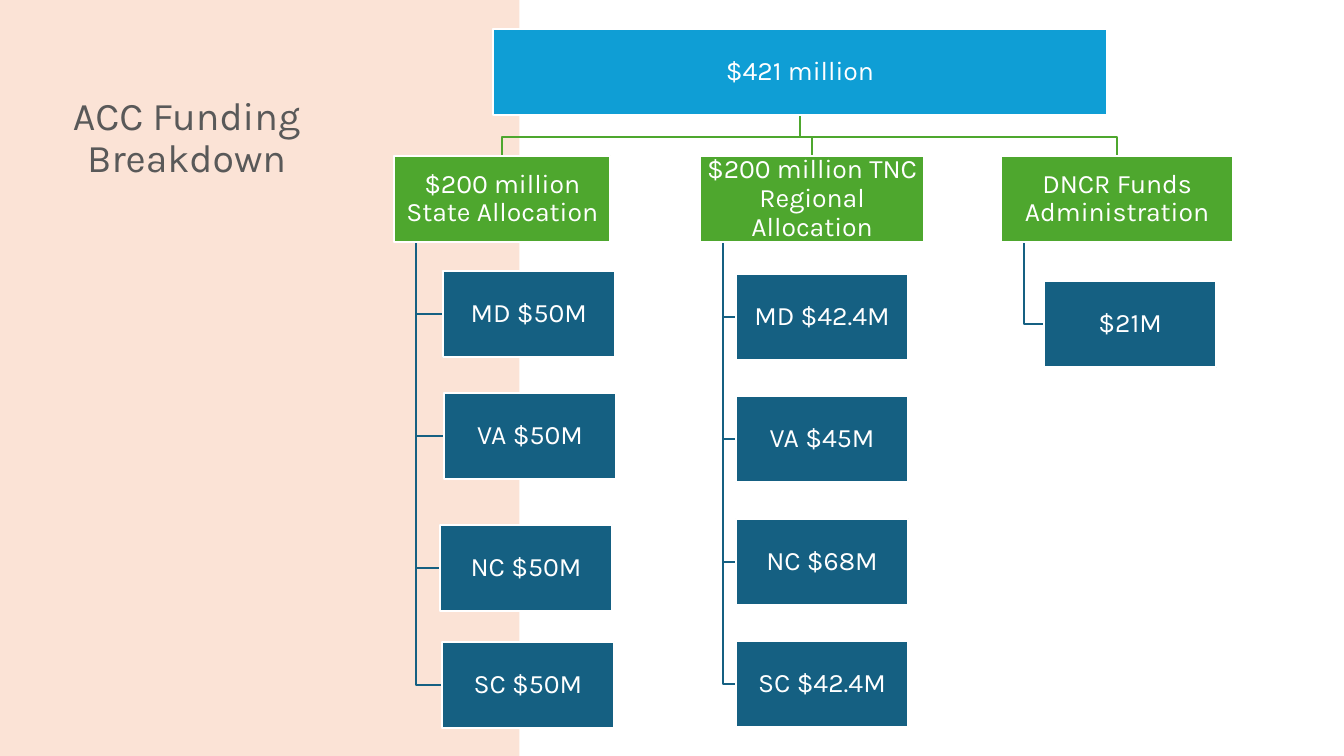
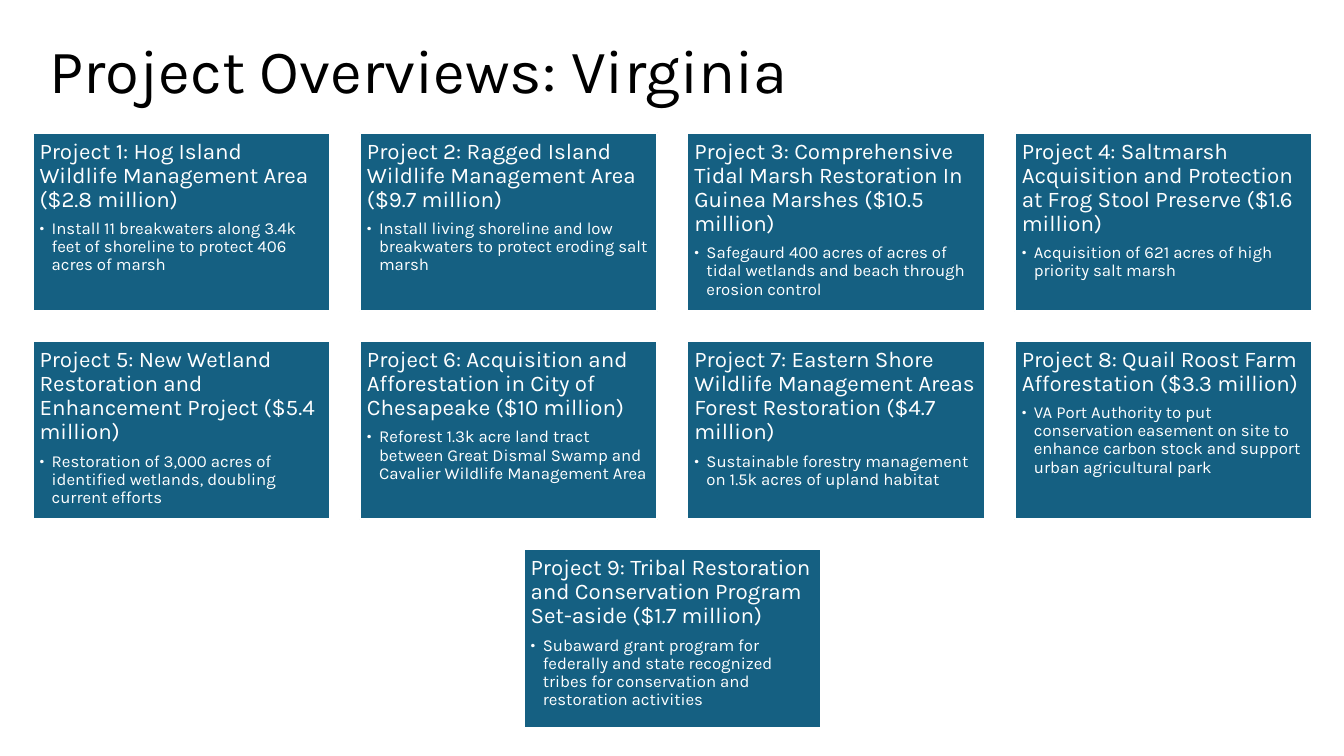
from collections import namedtuple

from lxml import etree
from pptx import Presentation
from pptx.dml.color import RGBColor
from pptx.enum.shapes import MSO_SHAPE
from pptx.enum.text import MSO_ANCHOR, PP_ALIGN
from pptx.oxml.ns import qn
from pptx.util import Inches, Pt

RECTANGLE = MSO_SHAPE.RECTANGLE
TOP, MIDDLE, BOTTOM = MSO_ANCHOR.TOP, MSO_ANCHOR.MIDDLE, MSO_ANCHOR.BOTTOM
LEFT, CENTER = PP_ALIGN.LEFT, PP_ALIGN.CENTER

SLIDE_WIDTH, SLIDE_HEIGHT = Inches(13.33), Inches(7.5)
COLUMN, ROW = SLIDE_WIDTH / 100, SLIDE_HEIGHT / 100
FONT = "Karla"
WHITE, BLACK, GRAY = "FFFFFF", "000000", "595959"
PEACH, SKY, GREEN, TEAL = "FBE3D6", "0F9ED5", "4EA72E", "156082"
LINE_WIDTH = Pt(1.5)

Box = namedtuple("Box", "left top width height")
Branch = namedtuple("Branch", "text left width leaves")
Leaf = namedtuple("Leaf", "text indent top")

NODE_HEIGHT, LEAF_WIDTH = 11.4, 12.83
BRANCH_TOP, CROSSBAR_TOP = 20.6, 18.13
RAIL_SHARE = 0.1
REGIONAL_TOP, REGIONAL_STEP = 36.2, 16.2
REGIONAL_SHARES = ["MD $42.4M", "VA $45M", "NC $68M", "SC $42.4M"]

BRANCHES = [
    Branch("$200 million State Allocation", 29.35, 16.05, [
        Leaf("MD $50M", 3.58, 35.87),
        Leaf("VA $50M", 3.67, 52),
        Leaf("NC $50M", 3.37, 69.4),
        Leaf("SC $50M", 3.51, 84.87),
    ]),
    Branch("$200 million TNC Regional Allocation", 52.1, 16.65, [
        Leaf(text, 2.65, REGIONAL_TOP + index * REGIONAL_STEP)
        for index, text in enumerate(REGIONAL_SHARES)
    ]),
    Branch("DNCR Funds Administration", 74.49, 17.25, [Leaf("$21M", 3.18, 37.2)]),
]

CARDS_PER_ROW = 4
CARD_WIDTH, CARD_HEIGHT = 22.14, 23.6
CARD_COLUMN_STEP, CARD_ROW_STEP = 24.36, 27.55

PROJECTS = [
    ("Project 1: Hog Island Wildlife Management Area ($2.8 million)",
     "Install 11 breakwaters along 3.4k feet of shoreline to protect 406 acres of marsh"),
    ("Project 2: Ragged Island Wildlife Management Area ($9.7 million)",
     "Install living shoreline and low breakwaters to protect eroding salt marsh"),
    ("Project 3: Comprehensive Tidal Marsh Restoration In Guinea Marshes ($10.5 million)",
     "Safegaurd 400 acres of acres of tidal wetlands and beach through erosion control"),
    ("Project 4: Saltmarsh Acquisition and Protection at Frog Stool Preserve ($1.6 million)",
     "Acquisition of 621 acres of high priority salt marsh"),
    ("Project 5: New Wetland Restoration and Enhancement Project ($5.4 million)",
     "Restoration of 3,000 acres of identified wetlands, doubling current efforts"),
    ("Project 6: Acquisition and Afforestation in City of Chesapeake ($10 million)",
     "Reforest 1.3k acre land tract between Great Dismal Swamp and Cavalier Wildlife "
     "Management Area"),
    ("Project 7: Eastern Shore Wildlife Management Areas Forest Restoration ($4.7 million)",
     "Sustainable forestry management on 1.5k acres of upland habitat"),
    ("Project 8: Quail Roost Farm Afforestation ($3.3 million)",
     "VA Port Authority to put conservation easement on site to enhance carbon stock and "
     "support urban agricultural park"),
    ("Project 9: Tribal Restoration and Conservation Program Set-aside ($1.7 million)",
     "Subaward grant program for federally and state recognized tribes for conservation and "
     "restoration activities"),
]


def color(hex_string):
    return RGBColor.from_string(hex_string)


def to_emu(box):
    return (round(box.left * COLUMN), round(box.top * ROW),
            round(box.width * COLUMN), round(box.height * ROW))


def center_x(box):
    return box.left + box.width / 2


def center_y(box):
    return box.top + box.height / 2


def bottom(box):
    return box.top + box.height


def prepare_frame(shape, anchor, inset_x, inset_y):
    frame = shape.text_frame
    frame.word_wrap = True
    frame.vertical_anchor = anchor
    frame.margin_left = frame.margin_right = Inches(inset_x)
    frame.margin_top = frame.margin_bottom = Inches(inset_y)
    return frame


def add_bullet(paragraph, indent):
    paragraph.level = 1
    properties = paragraph._p.get_or_add_pPr()
    properties.set("marL", str(Inches(indent)))
    properties.set("indent", str(-Inches(indent)))
    etree.SubElement(properties, qn("a:buFont")).set("typeface", FONT)
    etree.SubElement(properties, qn("a:buChar")).set("char", "•")


def write_text(paragraph, text, size, font_color=WHITE, alignment=LEFT, space_after=0,
               bullet_indent=None):
    paragraph.alignment = alignment
    paragraph.line_spacing = 0.9
    paragraph.space_after = Pt(space_after)
    if bullet_indent:
        add_bullet(paragraph, bullet_indent)
    run = paragraph.add_run()
    run.text = text
    for font in (paragraph.font, run.font):
        font.name = FONT
        font.size = Pt(size)
        font.color.rgb = color(font_color)


def add_rectangle(slide, box, fill, outline=None):
    shape = slide.shapes.add_shape(RECTANGLE, *to_emu(box))
    shape.shadow.inherit = False
    shape.fill.solid()
    shape.fill.fore_color.rgb = color(fill)
    if outline:
        shape.line.color.rgb = color(outline)
        shape.line.width = LINE_WIDTH
    else:
        shape.line.fill.background()
    return shape


def add_bent_line(slide, points, line_color):
    start, *corners = [(round(x * COLUMN), round(y * ROW)) for x, y in points]
    builder = slide.shapes.build_freeform(*start)
    builder.add_line_segments(corners, close=False)
    shape = builder.convert_to_shape()
    shape.shadow.inherit = False
    shape.fill.background()
    shape.line.color.rgb = color(line_color)
    shape.line.width = LINE_WIDTH


def add_title(slide, box, text, size, font_color, anchor, alignment):
    title = slide.shapes.add_textbox(*to_emu(box))
    frame = prepare_frame(title, anchor, 0.1, 0.05)
    write_text(frame.paragraphs[0], text, size, font_color=font_color, alignment=alignment)


def add_node(slide, box, text, fill):
    node = add_rectangle(slide, box, fill, WHITE)
    frame = prepare_frame(node, MIDDLE, 0.01, 0.01)
    write_text(frame.paragraphs[0], text, 19, alignment=CENTER)


def add_branch(slide, box, branch):
    rail_x = box.left + box.width * RAIL_SHARE
    for leaf in branch.leaves:
        leaf_box = Box(box.left + leaf.indent, leaf.top, LEAF_WIDTH, NODE_HEIGHT)
        leaf_y = center_y(leaf_box)
        add_bent_line(slide, [(rail_x, bottom(box)), (rail_x, leaf_y),
                              (leaf_box.left, leaf_y)], TEAL)
        add_node(slide, leaf_box, leaf.text, TEAL)
    add_node(slide, box, branch.text, GREEN)


def add_funding_tree(slide, root_box):
    root_x = center_x(root_box)
    for branch in BRANCHES:
        box = Box(branch.left, BRANCH_TOP, branch.width, NODE_HEIGHT)
        add_bent_line(slide, [(root_x, bottom(root_box)), (root_x, CROSSBAR_TOP),
                              (center_x(box), CROSSBAR_TOP), (center_x(box), box.top)], GREEN)
        add_branch(slide, box, branch)
    add_node(slide, root_box, "$421 million", SKY)


def add_project_card(slide, box, heading, detail):
    card = add_rectangle(slide, box, TEAL, WHITE)
    frame = prepare_frame(card, TOP, 0.07, 0.07)
    write_text(frame.paragraphs[0], heading, 16, space_after=5.6)
    write_text(frame.add_paragraph(), detail, 12, space_after=1.8, bullet_indent=0.12)


def add_project_grid(slide, left, top):
    for start in range(0, len(PROJECTS), CARDS_PER_ROW):
        row_projects = PROJECTS[start:start + CARDS_PER_ROW]
        first_column = (CARDS_PER_ROW - len(row_projects)) / 2
        card_top = top + start // CARDS_PER_ROW * CARD_ROW_STEP
        for column, (heading, detail) in enumerate(row_projects):
            card_left = left + (first_column + column) * CARD_COLUMN_STEP
            box = Box(card_left, card_top, CARD_WIDTH, CARD_HEIGHT)
            add_project_card(slide, box, heading, detail)


def build_funding_slide(slide):
    add_rectangle(slide, Box(-0.15, 0, 38.8, 100), PEACH)
    add_title(slide, Box(2.78, 9.42, 22.2, 15.2), "ACC Funding Breakdown",
              28, GRAY, BOTTOM, CENTER)
    add_funding_tree(slide, Box(36.68, 3.87, 45.69, NODE_HEIGHT))


def build_projects_slide(slide):
    add_title(slide, Box(2.95, 0, 86.27, 19.4), "Project Overviews: Virginia",
              44, BLACK, MIDDLE, LEFT)
    add_project_grid(slide, 2.42, 17.55)


def main():
    presentation = Presentation()
    presentation.slide_width = SLIDE_WIDTH
    presentation.slide_height = SLIDE_HEIGHT
    blank_layout = presentation.slide_layouts[6]
    for build_slide in (build_funding_slide, build_projects_slide):
        build_slide(presentation.slides.add_slide(blank_layout))
    presentation.save("out.pptx")


if __name__ == "__main__":
    main()
